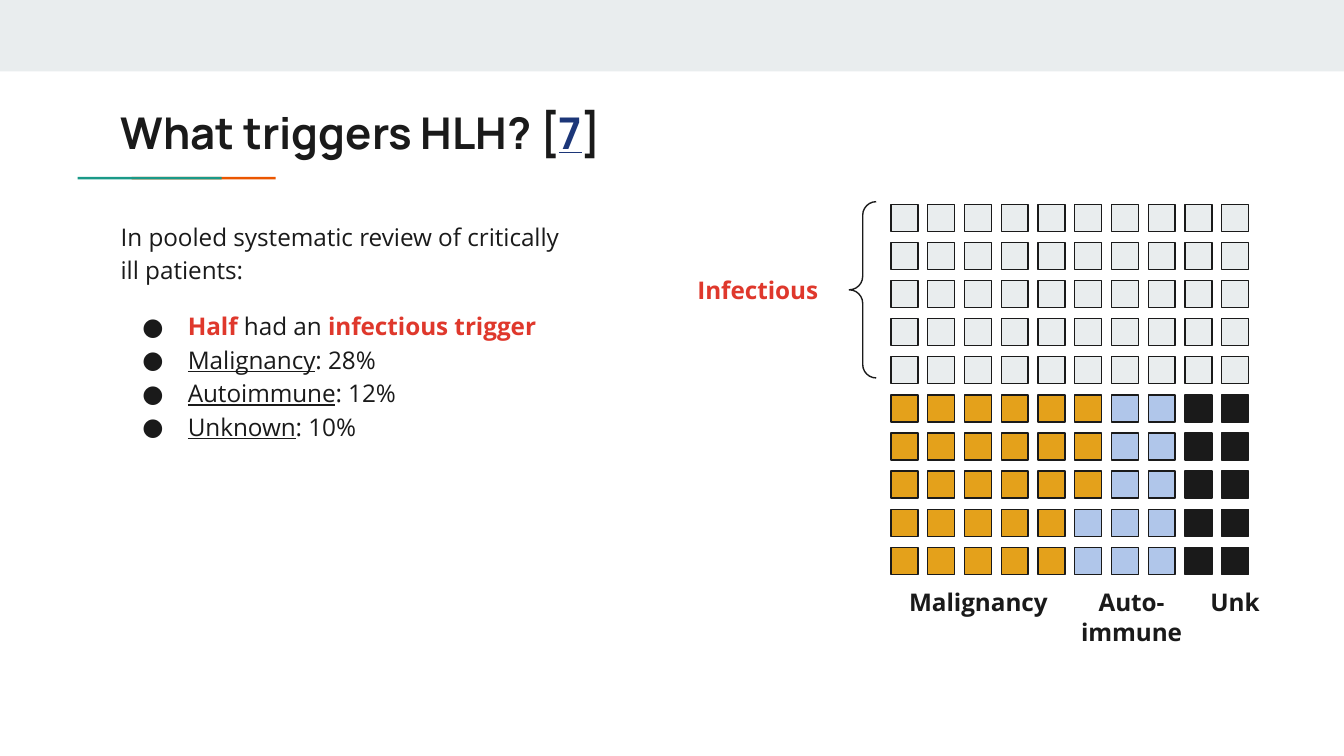
from lxml import etree
from pptx import Presentation
from pptx.dml.color import RGBColor
from pptx.enum.shapes import MSO_SHAPE
from pptx.enum.text import MSO_ANCHOR, MSO_AUTO_SIZE, PP_ALIGN
from pptx.oxml.ns import qn
from pptx.util import Cm, Pt

# Content
COLORS = {"ink": "1A1A1A", "mist": "E9EDEE", "teal": "1A9988", "orange": "EB5600",
          "navy": "1C3678", "red": "DF382C", "gold": "E4A11B", "sky": "B0C6EA"}
BOLD_RED = {"bold": True, "color": "red"}
UNDER = {"underline": True}

TITLE = [[("What triggers HLH? [", {}),
          ("7", {"color": "navy", "underline": True}),
          ("]", {})]]
INTRO = [("In pooled systematic review of critically ill patients:", {})]
BULLETS = [
    [("Half", BOLD_RED), (" had an ", {}), ("infectious trigger", BOLD_RED)],
    [("Malignancy", UNDER), (": 28%", {})],
    [("Autoimmune", UNDER), (": 12%", {})],
    [("Unknown", UNDER), (": 10%", {})],
]
# Each grid row: (colour, number of squares) from left to right
ROWS = (5 * [[("mist", 10)]]
        + 3 * [[("gold", 6), ("sky", 2), ("ink", 2)]]
        + 2 * [[("gold", 5), ("sky", 3), ("ink", 2)]])
# Labels: lines, colour, left, top, width, height in cm
LABELS = [
    (["Malignancy"], "ink", 16.84, 10.85, 3.3, 1.07),
    (["Auto-", "immune"], "ink", 20.14, 10.85, 2.49, 1.63),
    (["Unk"], "ink", 22.5, 10.85, 1.68, 1.07),
    (["Infectious"], "red", 12.67, 4.95, 3.3, 1.07),
]
GRID_LEFT, GRID_TOP, CELL = 16.84, 3.86, 0.51
STEP_X, STEP_Y = 6.25 / 9, 6.48 / 9


def rgb(name):
    return RGBColor.from_string(COLORS[name])


def place(sp, left, top, width, height):
    sp.left, sp.top, sp.width, sp.height = Cm(left), Cm(top), Cm(width), Cm(height)


def add_shape(slide, kind, box, fill=None, line=None):
    sp = slide.shapes.add_shape(kind, *(Cm(v) for v in box))
    sp.shadow.inherit = False
    if fill:
        sp.fill.solid()
        sp.fill.fore_color.rgb = rgb(fill)
    else:
        sp.fill.background()
    if line:
        sp.line.color.rgb = rgb(line)
        sp.line.width = Pt(0.75)
    else:
        sp.line.fill.background()
    return sp


def write(tf, paragraphs, size=13, font="Open Sans", color="ink", bold=False,
          align=PP_ALIGN.LEFT, spacing=1.0, fit=MSO_AUTO_SIZE.NONE):
    tf.word_wrap = True
    tf.auto_size = fit
    tf.vertical_anchor = MSO_ANCHOR.TOP
    tf.margin_left = tf.margin_right = tf.margin_top = tf.margin_bottom = Cm(0.25)
    for i, runs in enumerate(paragraphs):
        p = tf.add_paragraph() if i else tf.paragraphs[0]
        p.alignment = align
        p.line_spacing = spacing
        p.space_before = Pt(0)
        for text, style in runs:
            r = p.add_run()
            r.text = text
            r.font.name, r.font.size = font, Pt(size)
            r.font.bold = style.get("bold", bold)
            r.font.underline = style.get("underline", False)
            r.font.color.rgb = rgb(style.get("color", color))


def set_bullet(p, char=None):
    pPr = p._p.get_or_add_pPr()
    pPr.set("marL", str(Cm(1.27) if char else 0))
    pPr.set("indent", str(Cm(-0.86) if char else 0))
    if not char:
        etree.SubElement(pPr, qn("a:buNone"))
        return
    clr = etree.SubElement(pPr, qn("a:buClr"))
    etree.SubElement(clr, qn("a:srgbClr"), val=COLORS["ink"])
    etree.SubElement(pPr, qn("a:buFont"), typeface="Open Sans")
    etree.SubElement(pPr, qn("a:buChar"), char=char)


prs = Presentation()
prs.slide_width, prs.slide_height = Cm(25.4), Cm(14.28)
s = prs.slides.add_slide(prs.slide_layouts[1])
title, body = s.placeholders

# Top band and accent rule
add_shape(s, MSO_SHAPE.RECTANGLE, (0, 0, 25.4, 1.35), "mist")
for left, color in ((2.49, "orange"), (1.47, "teal")):
    add_shape(s, MSO_SHAPE.RECTANGLE, (left, 3.34, 2.72, 0.05), color)

# Title and list
place(title, 2.03, 1.75, 21.36, 1.5)
write(title.text_frame, TITLE, size=23.4, font="Manrope", bold=True)
place(body, 2.03, 3.86, 8.81, 6.27)
tf = body.text_frame
write(tf, [INTRO] + BULLETS, spacing=1.15)
set_bullet(tf.paragraphs[0])
for p in tf.paragraphs[1:]:
    set_bullet(p, "●")
tf.paragraphs[1].space_before = Pt(12)

# Grid of 100 squares
for i, row in enumerate(ROWS):
    cells = [color for color, count in row for _ in range(count)]
    for j, color in enumerate(cells):
        box = (GRID_LEFT + j * STEP_X, GRID_TOP + i * STEP_Y, CELL, CELL)
        add_shape(s, MSO_SHAPE.RECTANGLE, box, color, "ink")

# Group labels and brace
for lines, color, *box in LABELS:
    tb = s.shapes.add_textbox(*(Cm(v) for v in box))
    write(tb.text_frame, [[(line, {})] for line in lines], color=color, bold=True,
          align=PP_ALIGN.CENTER, fit=MSO_AUTO_SIZE.SHAPE_TO_FIT_TEXT)
brace = add_shape(s, MSO_SHAPE.LEFT_BRACE, (16.05, 3.81, 0.51, 3.33), line="ink")
brace.adjustments[0] = 0.5

prs.save("out.pptx")
